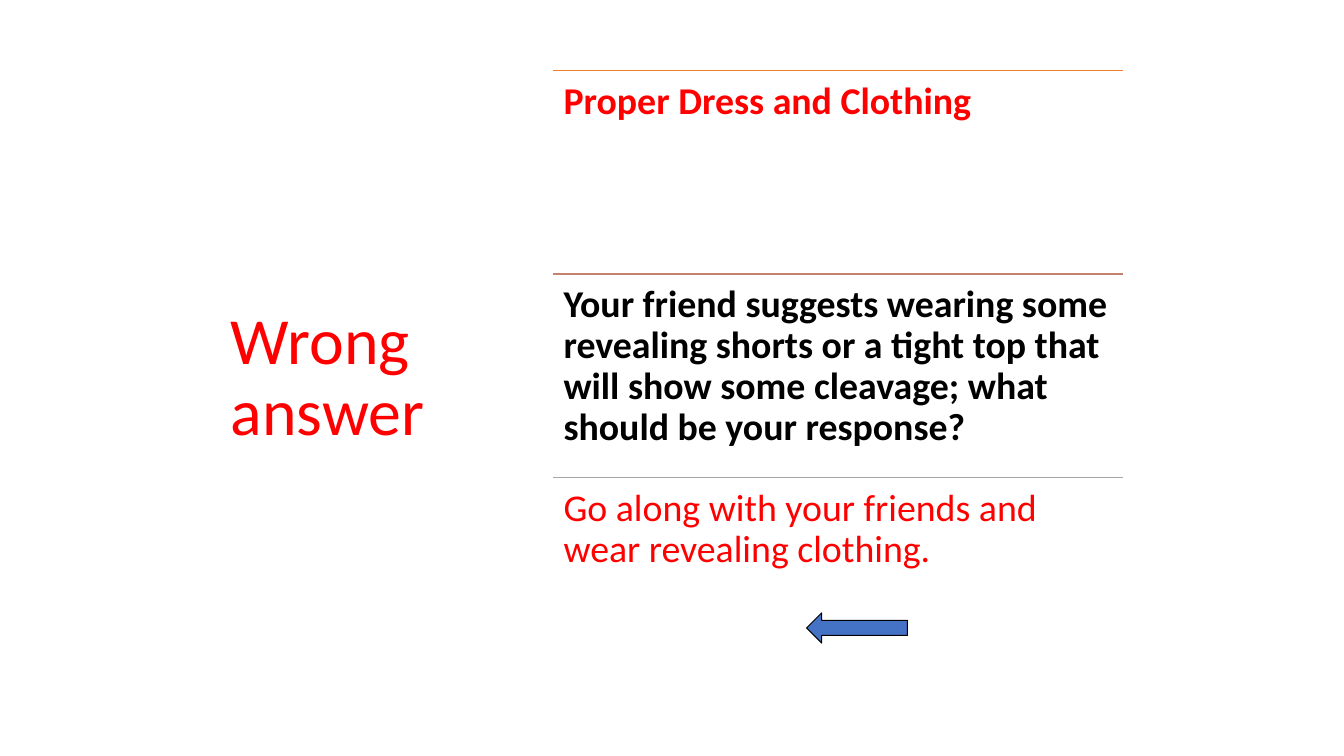
from dataclasses import dataclass

from lxml import etree
from pptx import Presentation
from pptx import util as u
from pptx.dml.color import RGBColor
from pptx.enum import shapes, text
from pptx.oxml import ns

RED = RGBColor(0xFF, 0x00, 0x00)
BLACK = RGBColor(0x00, 0x00, 0x00)
BLUE = RGBColor(0x44, 0x72, 0xC4)
ORANGE = RGBColor(0xED, 0x7D, 0x31)
CLAY = RGBColor(0xC4, 0x81, 0x70)
GRAY = RGBColor(0xA5, 0xA5, 0xA5)

FONT = "Calibri"
ROW_LEFT = u.Inches(5.48)
ROW_TOP = u.Inches(0.7)
ROW_WIDTH = u.Inches(5.66)
ROW_HEIGHT = u.Inches(2.02)
ROW_INSET = u.Inches(0.11)


@dataclass(frozen=True)
class Row:
    wording: str
    rule_color: RGBColor
    text_color: RGBColor
    bold: bool


ROWS = (
    Row("Proper Dress and Clothing", ORANGE, RED, True),
    Row(
        "Your friend suggests wearing some revealing shorts or a tight top "
        "that will show some cleavage; what should be your response?",
        CLAY, BLACK, True,
    ),
    Row("Go along with your friends and wear revealing clothing.", GRAY, RED, False),
)


def format_text(frame, wording: str, size: float, color: RGBColor, bold: bool) -> None:
    frame.text = wording
    frame.word_wrap = True
    frame.auto_size = text.MSO_AUTO_SIZE.NONE
    paragraph = frame.paragraphs[0]
    paragraph.alignment = text.PP_ALIGN.LEFT
    paragraph.line_spacing = 0.9
    paragraph.font.name = FONT
    paragraph.font.size = u.Pt(size)
    paragraph.font.bold = bold
    paragraph.font.color.rgb = color


def add_title(slide) -> None:
    title = slide.shapes.title
    title.left, title.top = u.Inches(2.19), u.Inches(0.7)
    title.width, title.height = u.Inches(2.8), u.Inches(6.11)
    format_text(title.text_frame, "Wrong answer", 47, RED, False)
    title.text_frame.vertical_anchor = text.MSO_ANCHOR.MIDDLE


def add_row(slide, row: Row, top: int) -> None:
    rule = slide.shapes.add_connector(
        shapes.MSO_CONNECTOR.STRAIGHT, ROW_LEFT, top, ROW_LEFT + ROW_WIDTH, top
    )
    rule.line.color.rgb = row.rule_color
    rule.line.width = u.Pt(1)
    etree.SubElement(rule._element.spPr, ns.qn("a:effectLst"))

    frame = slide.shapes.add_textbox(ROW_LEFT, top, ROW_WIDTH, ROW_HEIGHT).text_frame
    format_text(frame, row.wording, 27, row.text_color, row.bold)
    frame.margin_left = frame.margin_right = ROW_INSET
    frame.margin_top = frame.margin_bottom = ROW_INSET
    frame.vertical_anchor = text.MSO_ANCHOR.TOP


def add_back_arrow(slide) -> None:
    arrow = slide.shapes.add_shape(
        shapes.MSO_SHAPE.LEFT_ARROW,
        u.Inches(8), u.Inches(6.08), u.Inches(1), u.Inches(0.3),
    )
    arrow.shadow.inherit = False
    arrow.fill.solid()
    arrow.fill.fore_color.rgb = BLUE
    arrow.line.color.rgb = BLACK
    arrow.line.width = u.Pt(0.75)


def main() -> None:
    presentation = Presentation()
    presentation.slide_width = u.Inches(13.33)
    presentation.slide_height = u.Inches(7.5)
    slide = presentation.slides.add_slide(presentation.slide_layouts[5])
    add_title(slide)
    for index, row in enumerate(ROWS):
        add_row(slide, row, ROW_TOP + index * ROW_HEIGHT)
    add_back_arrow(slide)
    presentation.save("out.pptx")


if __name__ == "__main__":
    main()
